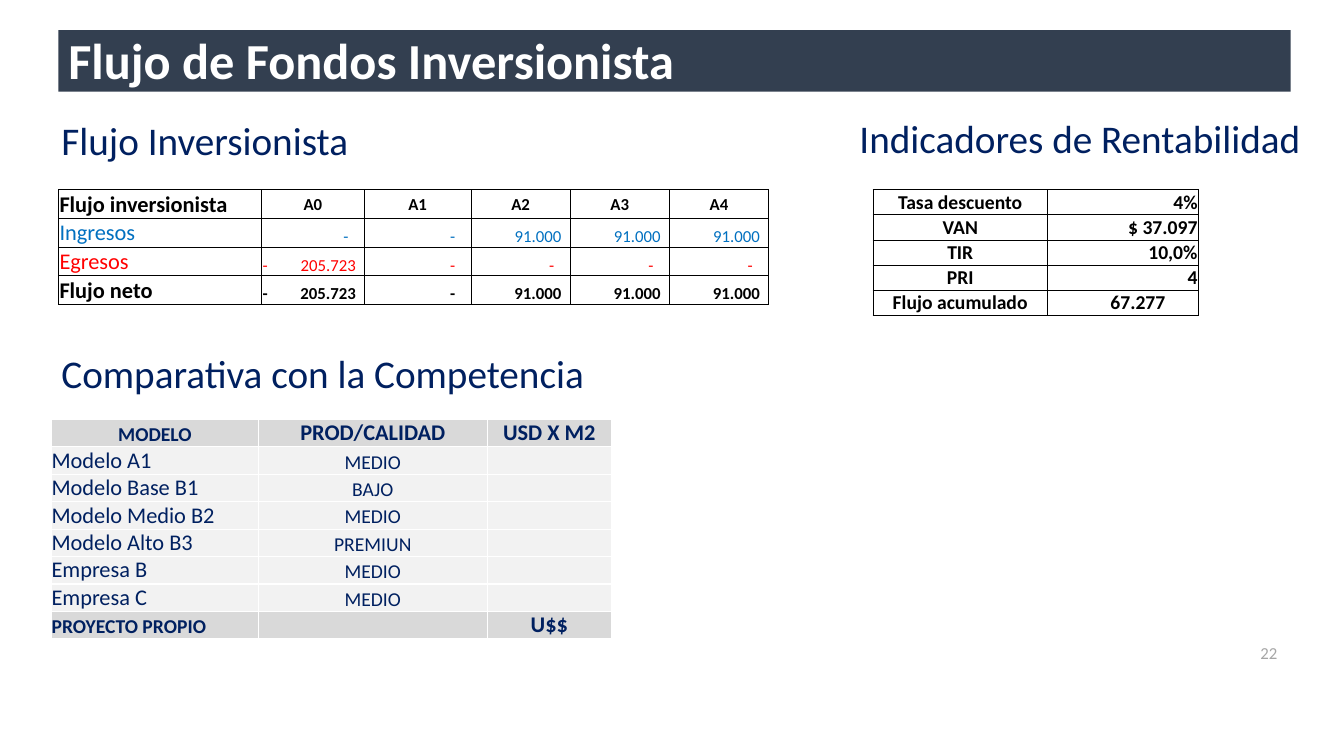
import pptx
import pptx.dml.color
import pptx.enum.shapes
import pptx.enum.text
import pptx.oxml
import pptx.oxml.ns
import pptx.util

Cm = pptx.util.Cm
Pt = pptx.util.Pt
RGBColor = pptx.dml.color.RGBColor
Align = pptx.enum.text.PP_ALIGN
Anchor = pptx.enum.text.MSO_ANCHOR

BLACK = RGBColor(0x00, 0x00, 0x00)
WHITE = RGBColor(0xFF, 0xFF, 0xFF)
SLATE = RGBColor(0x33, 0x3F, 0x50)
NAVY = RGBColor(0x00, 0x20, 0x60)
BLUE = RGBColor(0x00, 0x70, 0xC0)
RED = RGBColor(0xFF, 0x00, 0x00)
SILVER = RGBColor(0xD9, 0xD9, 0xD9)
PALE = RGBColor(0xF2, 0xF2, 0xF2)
GRAY = RGBColor(0xA6, 0xA6, 0xA6)

TITLE_ONLY_LAYOUT = 5
FONT = "Calibri"


def write(frame, text, size=14, color=BLACK, bold=False, align=Align.LEFT,
          anchor=Anchor.MIDDLE, spacing=None, tab=None):
    frame.word_wrap = True
    frame.vertical_anchor = anchor
    paragraph = frame.paragraphs[0]
    paragraph.alignment = align
    if spacing:
        paragraph.line_spacing = spacing
    if tab:
        paragraph._p.get_or_add_pPr().append(pptx.oxml.parse_xml(
            f'<a:tabLst {pptx.oxml.ns.nsdecls("a")}>'
            f'<a:tab pos="{Cm(tab)}" algn="r"/></a:tabLst>'))
    if not text:
        paragraph._p.get_or_add_endParaRPr().set("sz", str(size * 100))
        return
    run = paragraph.add_run()
    run.text = text
    run.font.name = FONT
    run.font.size = Pt(size)
    run.font.bold = bold
    run.font.color.rgb = color


class SlideBuilder:
    def __init__(self, presentation):
        layout = presentation.slide_layouts[TITLE_ONLY_LAYOUT]
        self.slide = presentation.slides.add_slide(layout)
        self.shapes = self.slide.shapes

    def rectangle(self, left, top, width, height, fill, line=None):
        shape = self.shapes.add_shape(
            pptx.enum.shapes.MSO_SHAPE.RECTANGLE,
            Cm(left), Cm(top), Cm(width), Cm(height))
        shape.shadow.inherit = False
        shape.fill.solid()
        shape.fill.fore_color.rgb = fill
        if line is None:
            shape.line.fill.background()
        else:
            shape.line.color.rgb = line
            shape.line.width = Pt(0.75)
        return shape

    def title(self, text):
        banner = self.rectangle(1.47, 0.76, 31.06, 1.55, SLATE)
        title = self.shapes.title
        title._element.addprevious(banner._element)
        title.left, title.top = Cm(1.47), Cm(0.61)
        title.width, title.height = Cm(23.09), Cm(1.96)
        title.text_frame.auto_size = pptx.enum.text.MSO_AUTO_SIZE.NONE
        write(title.text_frame, text, size=36, color=WHITE, bold=True, spacing=0.9)

    def heading(self, text, left, top, width):
        shape = self.rectangle(left, top, width, 1.3, WHITE, WHITE)
        write(shape.text_frame, text, size=28, color=NAVY, spacing=0.9)

    def page_number(self, text):
        box = self.shapes.add_textbox(Cm(31.17), Cm(15.72), Cm(1.27), Cm(1.45))
        write(box.text_frame, text, size=12, color=GRAY, align=Align.RIGHT)

    def border(self, cell, color, width):
        properties = cell._tc.get_or_add_tcPr()
        for side in ("lnL", "lnR", "lnT", "lnB"):
            properties.append(pptx.oxml.parse_xml(
                f'<a:{side} {pptx.oxml.ns.nsdecls("a")} w="{Pt(width)}">'
                f'<a:solidFill><a:srgbClr val="{color}"/></a:solidFill></a:{side}>'))

    def table(self, left, top, widths, row_height, rows, line_color, line_width, margin):
        frame = self.shapes.add_table(
            len(rows), len(widths), Cm(left), Cm(top),
            Cm(sum(widths)), Cm(row_height * len(rows)))
        table = frame.table
        table.first_row = False
        table.horz_banding = False
        for column, width in zip(table.columns, widths):
            column.width = Cm(width)
        for row, entries in zip(table.rows, rows):
            row.height = Cm(row_height)
            for cell, (text, style) in zip(row.cells, entries):
                style = dict(style)
                fill = style.pop("fill", None)
                cell.margin_left = cell.margin_top = Cm(margin)
                cell.margin_right = Cm(style.pop("indent", margin))
                cell.margin_bottom = 0
                anchor = style.pop("anchor", Anchor.BOTTOM)
                self.border(cell, line_color, line_width)
                if fill is None:
                    cell.fill.background()
                else:
                    cell.fill.solid()
                    cell.fill.fore_color.rgb = fill
                write(cell.text_frame, text, **style)
                cell.vertical_anchor = anchor


def amount(text, **style):
    if "\t" in text:
        return text, dict(style, size=12, tab=2.35)
    indent = 0.4 if text == "-" else 0.22
    return text, dict(style, size=12, align=Align.RIGHT, indent=indent)


def cash_flow_rows():
    years = dict(size=12, bold=True, align=Align.CENTER, anchor=Anchor.MIDDLE)
    rows = [[("Flujo inversionista", dict(size=16, bold=True))]
            + [(f"A{year}", years) for year in range(5)]]
    income = ["91.000"] * 3
    for label, color, bold, amounts in (
            ("Ingresos", BLUE, False, ["-", "-"] + income),
            ("Egresos", RED, False, ["-\t205.723"] + ["-"] * 4),
            ("Flujo neto", BLACK, True, ["-\t205.723", "-"] + income)):
        style = dict(color=color, bold=bold)
        rows.append([(label, dict(style, size=16))]
                    + [amount(text, **style) for text in amounts])
    return rows


def indicator_rows():
    label_style = dict(bold=True, align=Align.CENTER)
    value_style = dict(bold=True, align=Align.RIGHT)
    rows = [[(label, label_style), (value, value_style)] for label, value in (
        ("Tasa descuento", "4%"), ("VAN", "$ 37.097"), ("TIR", "10,0%"), ("PRI", "4"))]
    rows.append([("Flujo acumulado", dict(label_style, fill=WHITE)),
                 ("67.277", dict(value_style, fill=WHITE, indent=0.84))])
    return rows


def competitor_rows():
    strong = dict(color=NAVY, bold=True, fill=SILVER)
    plain = dict(color=NAVY, fill=PALE)
    header = dict(strong, size=16, align=Align.CENTER)
    rows = [[("MODELO", dict(header, size=14)), ("PROD/CALIDAD", header), ("USD X M2", header)]]
    for model, quality in (
            ("Modelo A1", "MEDIO"), ("Modelo Base B1", "BAJO"),
            ("Modelo Medio B2", "MEDIO"), ("Modelo Alto B3", "PREMIUN"),
            ("Empresa B", "MEDIO"), ("Empresa C", "MEDIO")):
        rows.append([(model, dict(plain, size=16)),
                     (quality, dict(plain, align=Align.CENTER)), ("", plain)])
    rows.append([("PROYECTO PROPIO", strong), ("", strong), ("U$$", header)])
    return rows


def main():
    presentation = pptx.Presentation()
    presentation.slide_width = Cm(33.87)
    presentation.slide_height = Cm(19.05)
    builder = SlideBuilder(presentation)
    builder.title("Flujo de Fondos Inversionista")
    builder.heading("Flujo Inversionista", 1.3, 2.95, 15.65)
    builder.heading("Indicadores de Rentabilidad", 21.41, 2.9, 12.46)
    builder.heading("Comparativa con la Competencia", 1.3, 8.81, 14.12)
    builder.table(1.47, 4.78, [5.12, 2.59, 2.69, 2.5, 2.5, 2.5], 0.7,
                  cash_flow_rows(), BLACK, 0.5, 0.03)
    builder.table(22, 4.78, [4.4, 3.81], 0.61, indicator_rows(), BLACK, 0.5, 0.03)
    builder.table(1.3, 10.57, [5.21, 5.77, 3.13], 0.69, competitor_rows(), WHITE, 1, 0)
    builder.page_number("22")
    presentation.save("out.pptx")


if __name__ == "__main__":
    main()
